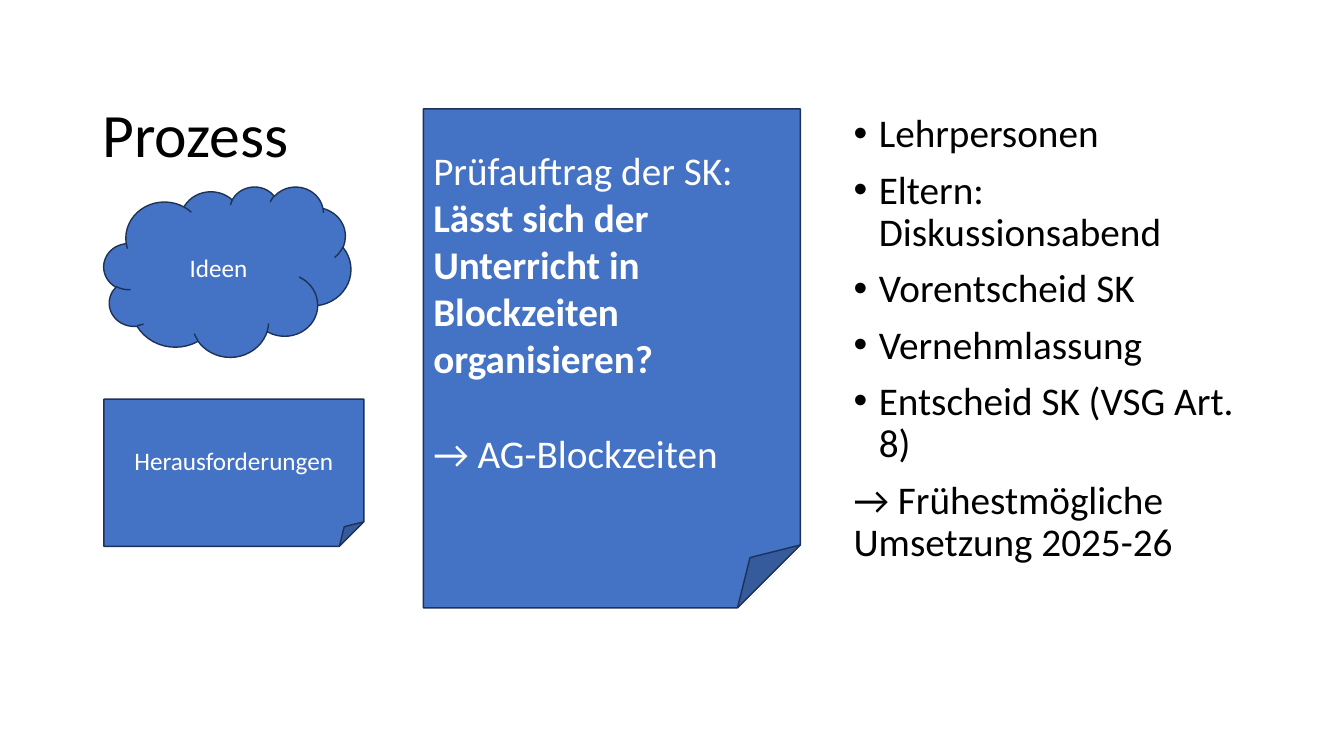
from lxml.etree import SubElement
from pptx import Presentation
from pptx.dml.color import RGBColor
from pptx.enum.shapes import MSO_SHAPE
from pptx.enum.text import MSO_ANCHOR, PP_ALIGN
from pptx.oxml.ns import qn
from pptx.util import Inches, Pt

COLORS = {"text": "000000", "fill": "4472C4", "outline": "1E3256", "light": "FFFFFF"}
FONT = "Calibri"
BODY_SIZE, LABEL_SIZE, TITLE_SIZE = 28, 18, 44


class SlideBuilder:
    """Holds the style and the current slide; areas are percent of the slide."""

    def __init__(self, presentation):
        self.width = presentation.slide_width
        self.height = presentation.slide_height
        self.slide = presentation.slides.add_slide(presentation.slide_layouts[6])

    def place(self, left, top, width, height):
        return (int(self.width * left / 100), int(self.height * top / 100),
                int(self.width * width / 100), int(self.height * height / 100))

    def add_text(self, frame, index, text, size, color, bold=False):
        paragraph = frame.paragraphs[0] if index == 0 else frame.add_paragraph()
        run = paragraph.add_run()
        run.text = text
        run.font.name = FONT
        run.font.size = Pt(size)
        run.font.bold = bold
        run.font.color.rgb = RGBColor.from_string(COLORS[color])
        return paragraph

    def text_box(self, area, anchor):
        frame = self.slide.shapes.add_textbox(*self.place(*area)).text_frame
        frame.word_wrap = True
        frame.vertical_anchor = anchor
        return frame

    def title(self, area, text):
        frame = self.text_box(area, MSO_ANCHOR.MIDDLE)
        self.add_text(frame, 0, text, TITLE_SIZE, "text").line_spacing = 0.9

    def steps(self, area, bulleted, conclusion):
        frame = self.text_box(area, MSO_ANCHOR.TOP)
        for index, text in enumerate([*bulleted, conclusion]):
            paragraph = self.add_text(frame, index, text, BODY_SIZE, "text")
            if index < len(bulleted):
                self.bullet(paragraph)
            paragraph.line_spacing = 0.9
            if index:
                paragraph.space_before = Pt(10)

    def bullet(self, paragraph):
        properties = paragraph._p.get_or_add_pPr()
        properties.set("marL", str(Inches(0.25)))
        properties.set("indent", str(Inches(-0.25)))
        SubElement(properties, qn("a:buFont")).set("typeface", "Arial")
        SubElement(properties, qn("a:buChar")).set("char", "•")

    def panel(self, kind, area):
        shape = self.slide.shapes.add_shape(kind, *self.place(*area))
        shape.shadow.inherit = False
        shape.fill.solid()
        shape.fill.fore_color.rgb = RGBColor.from_string(COLORS["fill"])
        shape.line.color.rgb = RGBColor.from_string(COLORS["outline"])
        shape.line.width = Pt(1)
        frame = shape.text_frame
        frame.word_wrap = True
        frame.vertical_anchor = MSO_ANCHOR.MIDDLE
        return frame

    def label(self, kind, area, text):
        frame = self.panel(kind, area)
        self.add_text(frame, 0, text, LABEL_SIZE, "light").alignment = PP_ALIGN.CENTER

    def assignment(self, area, intro, question, result):
        frame = self.panel(MSO_SHAPE.FOLDED_CORNER, area)
        frame.margin_bottom = Inches(0.36)
        for index, text in enumerate([intro, question, result]):
            paragraph = self.add_text(frame, index, text, BODY_SIZE, "light", text == question)
            paragraph.alignment = PP_ALIGN.LEFT
        paragraph.space_before = Pt(34)


def main():
    presentation = Presentation()
    presentation.slide_width = Inches(13.33)
    presentation.slide_height = Inches(7.5)
    builder = SlideBuilder(presentation)

    # Heading and process steps
    builder.title((6.9, 11.73, 86.25, 12.93), "Prozess")
    builder.steps(
        (62.78, 14.4, 30.38, 75.73),
        ["Lehrpersonen", "Eltern: Diskussionsabend", "Vorentscheid SK",
         "Vernehmlassung", "Entscheid SK (VSG Art. 8)"],
        "→ Frühestmögliche Umsetzung 2025-26")

    # Starting points on the left
    builder.label(MSO_SHAPE.CLOUD, (7.73, 24.67, 18.38, 22.53), "Ideen")
    builder.label(MSO_SHAPE.FOLDED_CORNER, (7.73, 52.8, 19.35, 19.47), "Herausforderungen")

    # Assignment in the middle
    builder.assignment(
        (31.5, 14.4, 28.05, 66),
        "Prüfauftrag der SK:",
        "Lässt sich der Unterricht in Blockzeiten organisieren?",
        "→ AG-Blockzeiten")

    presentation.save("out.pptx")


if __name__ == "__main__":
    main()
